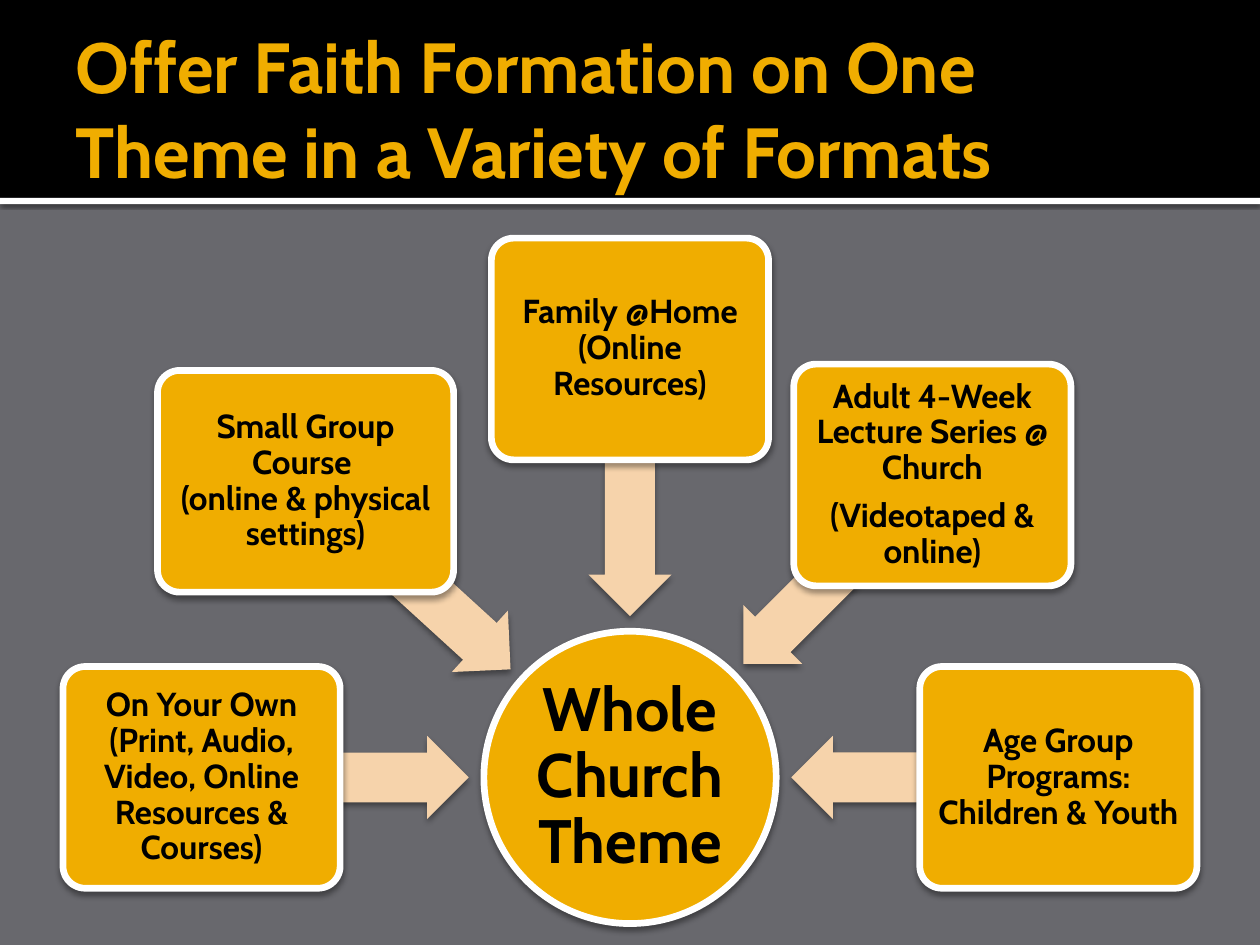
from dataclasses import dataclass
from math import cos, radians, sin

from lxml import etree
from pptx import Presentation
from pptx.dml.color import RGBColor as Rgb
from pptx.enum.shapes import MSO_SHAPE as Shape
from pptx.enum.text import MSO_ANCHOR as Anchor, MSO_AUTO_SIZE as Fit, PP_ALIGN as Align
from pptx.oxml.ns import qn
from pptx.util import Pt

PX = 9144  # EMU per px, 100 px to the inch


@dataclass(frozen=True)
class Theme:
    font: str = "Cabin"
    back: str = "68686D"
    dark: str = "000000"
    light: str = "FFFFFF"
    gold: str = "F0AD00"
    peach: str = "F6D3AB"
    title: float = 40.5
    hub: float = 35
    label: float = 19
    edge: float = 3.82


class Deck:
    """Holds the theme and the current slide."""

    def __init__(self, theme):
        self.theme = theme
        self.file = Presentation()
        self.file.slide_width, self.file.slide_height = 1000 * PX, 750 * PX
        self.slide = self.file.slides.add_slide(self.file.slide_layouts[5])
        fill = self.slide.background.fill
        fill.solid()
        fill.fore_color.rgb = Rgb.from_string(theme.back)

    def shape(self, kind, box, color, edged=False):
        item = self.slide.shapes.add_shape(kind, *(round(v) * PX for v in box))
        item.shadow.inherit = False
        item.fill.solid()
        item.fill.fore_color.rgb = Rgb.from_string(color)
        if edged:
            item.line.color.rgb = Rgb.from_string(self.theme.light)
            item.line.width = Pt(self.theme.edge)
        else:
            item.line.fill.background()
        return item

    def shade(self, item, alpha=38, blur=3.5, dist=2):
        """Cast a soft shadow straight down; blur and dist are in points."""
        group = item.element.spPr.find(qn("a:effectLst"))
        cast = etree.SubElement(
            group, qn("a:outerShdw"), blurRad=str(Pt(blur)),
            dist=str(Pt(dist)), dir="5400000", rotWithShape="0")
        tint = etree.SubElement(cast, qn("a:srgbClr"), val=self.theme.dark)
        etree.SubElement(tint, qn("a:alpha"), val=str(alpha * 1000))

    def style(self, para, size, color, align):
        para.alignment = align
        font = para.font
        font.name, font.size, font.bold = self.theme.font, Pt(size), True
        font.color.rgb = Rgb.from_string(color)

    def frame(self, item, text, insets):
        frame = item.text_frame
        frame.text = text
        frame.word_wrap = True
        frame.auto_size = Fit.NONE
        frame.vertical_anchor = Anchor.MIDDLE
        (frame.margin_left, frame.margin_top,
         frame.margin_right, frame.margin_bottom) = (v * PX for v in insets)
        return frame.paragraphs

    def title(self, text, box):
        item = self.slide.shapes.title
        item.left, item.top, item.width, item.height = (v * PX for v in box)
        for para in self.frame(item, text, (10, 5, 5, 5)):
            self.style(para, self.theme.title, self.theme.gold, Align.LEFT)
        item.element.getparent().append(item.element)  # in front of the band

    def node(self, kind, box, text, size, inset):
        item = self.shape(kind, box, self.theme.gold, edged=True)
        self.shade(item)
        for para in self.frame(item, text, (inset,) * 4):
            self.style(para, size, self.theme.dark, Align.CENTER)
            para.line_spacing = 0.9
            para.space_after = Pt(size * 0.35)
        return item

    def arrow(self, box, turn):
        item = self.shape(Shape.LEFT_ARROW, box, self.theme.peach)
        item.adjustments[0], item.adjustments[1] = 0.6, 0.5
        item.rotation = turn
        self.shade(item)


def around(x, y, wide, high):
    """Box of the given size centred on a point."""
    return x - wide / 2, y - high / 2, wide, high


HUB_X, HUB_Y, HUB = 500, 617, 232
TIP = 128  # from hub centre to arrow tip
THICK, HIGH = 66, 176

# angle, distance of box from hub, arrow length, box width, text
SPOKES = [
    (180, 340, 212, 220, "On Your Own (Print, Audio, Video, Online Resources & Courses)"),
    (222.4, 349, 220, 235, "Small Group Course \v(online & physical settings)"),
    (270, 340, 212, 220, "Family @Home (Online Resources)"),
    (315, 340, 212, 220, "Adult 4-Week Lecture Series @ Church\n(Videotaped & online)"),
    (0, 340, 212, 220, "Age Group Programs: Children & Youth"),
]


def main():
    theme = Theme()
    deck = Deck(theme)
    deck.shade(deck.shape(Shape.RECTANGLE, (0, 157, 1000, 5), theme.light), 60, 2.5, 0.8)
    deck.shape(Shape.RECTANGLE, (0, 0, 1000, 157), theme.dark)
    deck.title("Offer Faith Formation on One Theme in a Variety of Formats",
               (50, 17, 900, 137))

    deck.node(Shape.OVAL, around(HUB_X, HUB_Y, HUB, HUB),
              "Whole Church Theme", theme.hub, 2)
    for turn, far, length, wide, text in SPOKES:
        dx, dy = cos(radians(turn)), sin(radians(turn))
        mid = TIP + length / 2
        deck.arrow(around(HUB_X + mid * dx, HUB_Y + mid * dy, length, THICK), turn)
        card = deck.node(Shape.ROUNDED_RECTANGLE,
                         around(HUB_X + far * dx, HUB_Y + far * dy, wide, HIGH),
                         text, theme.label, 4)
        card.adjustments[0] = 0.1
    deck.file.save("out.pptx")


if __name__ == "__main__":
    main()
